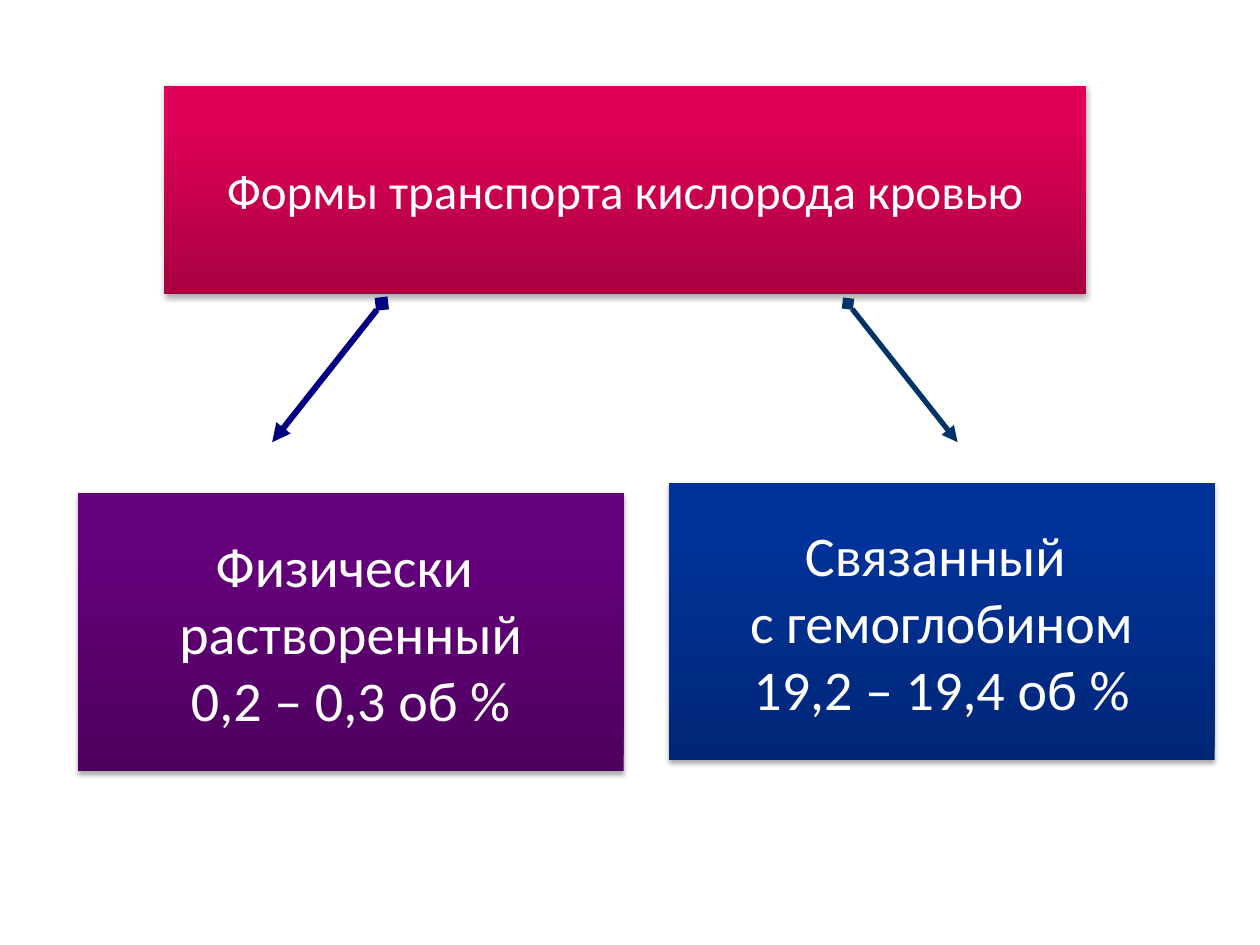
from copy import deepcopy
from lxml.etree import SubElement
from pptx import Presentation
from pptx.dml.color import RGBColor
from pptx.enum.shapes import MSO_CONNECTOR as Connector, MSO_SHAPE as Shape
from pptx.enum.text import MSO_ANCHOR as Anchor, PP_ALIGN as Align
from pptx.oxml.ns import qn
from pptx.util import Inches, Pt

# Content: lines of text, size, gradient from bottom to top, box in inches
WIDTH, HEIGHT = 10, 7.5
FONT = "Calibri"
COLORS = {
    "purple": ("4E005F", "65007B", "65007C"),
    "blue": ("002776", "003299", "00339A"),
    "crimson": ("AA0042", "DD0056", "DE0057"),
    "navy": "000080",
    "teal": "003366",
    "text": "FFFFFF",
    "shadow": "000000",
}
STOPS = (0, 0.8, 1)
BOXES = [
    (["Физически ", "растворенный", "0,2 – 0,3 об %"], 32, "purple",
     (0.62, 3.91, 4.33, 2.21)),
    (["Связанный ", "с гемоглобином", "19,2 – 19,4 об %"], 32, "blue",
     (5.31, 3.83, 4.33, 2.2)),
    (["Формы транспорта кислорода кровью"], 28, "crimson",
     (1.3, 0.68, 7.32, 1.65)),
]

# Arrows mirror each other about one axis: side, colour, line width
ARROWS = [(-1, "navy", 3.5), (1, "teal", 3)]
AXIS, START_REACH, END_REACH = 4.88, 1.85, 2.72
ARROW_TOP, ARROW_BOTTOM = 2.41, 3.51


def fill_gradient(shape, colors):
    shape.fill.gradient()
    shape.fill.gradient_angle = 90
    stop_list = shape._element.spPr.find(qn("a:gradFill")).find(qn("a:gsLst"))
    stop_list.append(deepcopy(stop_list[0]))
    for stop, position, color in zip(shape.fill.gradient_stops, STOPS, colors):
        stop.position = position
        stop.color.rgb = RGBColor.from_string(color)


def add_shadow(shape):
    shape.shadow.inherit = False
    effects = shape._element.spPr.find(qn("a:effectLst"))
    shadow = SubElement(effects, qn("a:outerShdw"), blurRad=str(Pt(3.1)),
                        dist=str(Pt(1.8)), dir="5400000", rotWithShape="0")
    color = SubElement(shadow, qn("a:srgbClr"), val=COLORS["shadow"])
    SubElement(color, qn("a:alpha"), val="35000")


def add_box(slide, lines, size, color, place):
    box = slide.shapes.add_shape(Shape.RECTANGLE, *map(Inches, place))
    fill_gradient(box, COLORS[color])
    box.line.fill.background()
    add_shadow(box)
    frame = box.text_frame
    frame.word_wrap = False
    frame.vertical_anchor = Anchor.MIDDLE
    frame.margin_left = frame.margin_right = 0
    frame.margin_top = frame.margin_bottom = 0
    for index, line in enumerate(lines):
        para = frame.add_paragraph() if index else frame.paragraphs[0]
        para.alignment = Align.CENTER
        span = para.add_run()
        span.text = line
        span.font.name = FONT
        span.font.size = Pt(size)
        span.font.color.rgb = RGBColor.from_string(COLORS["text"])


def add_arrow(slide, side, color, width):
    arrow = slide.shapes.add_connector(
        Connector.STRAIGHT,
        Inches(AXIS + side * START_REACH), Inches(ARROW_TOP),
        Inches(AXIS + side * END_REACH), Inches(ARROW_BOTTOM))
    arrow.line.color.rgb = RGBColor.from_string(COLORS[color])
    arrow.line.width = Pt(width)
    properties = arrow._element.spPr
    outline = properties.find(qn("a:ln"))
    SubElement(outline, qn("a:headEnd"), type="diamond")
    SubElement(outline, qn("a:tailEnd"), type="triangle")
    SubElement(properties, qn("a:effectLst"))


def main():
    deck = Presentation()
    deck.slide_width, deck.slide_height = Inches(WIDTH), Inches(HEIGHT)
    slide = deck.slides.add_slide(deck.slide_layouts[6])
    for box in BOXES:
        add_box(slide, *box)
    for arrow in ARROWS:
        add_arrow(slide, *arrow)
    deck.save("out.pptx")


if __name__ == "__main__":
    main()
